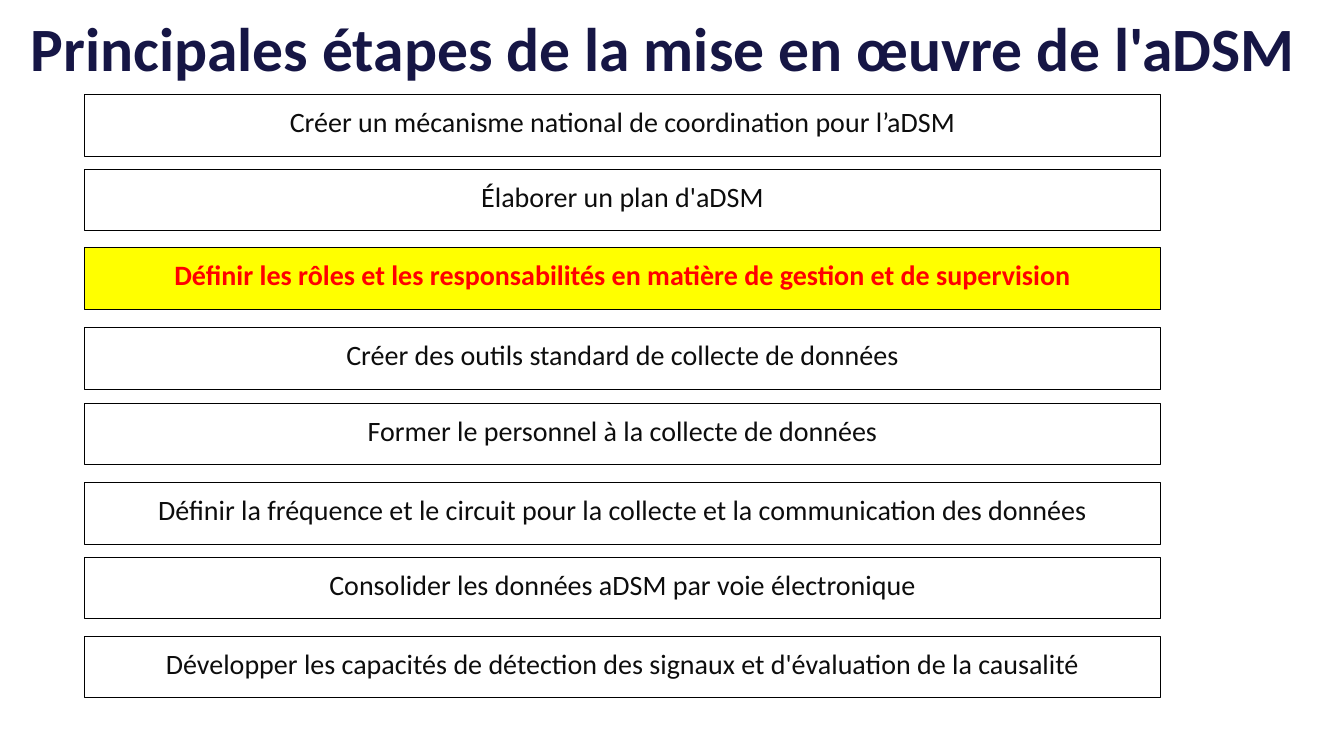
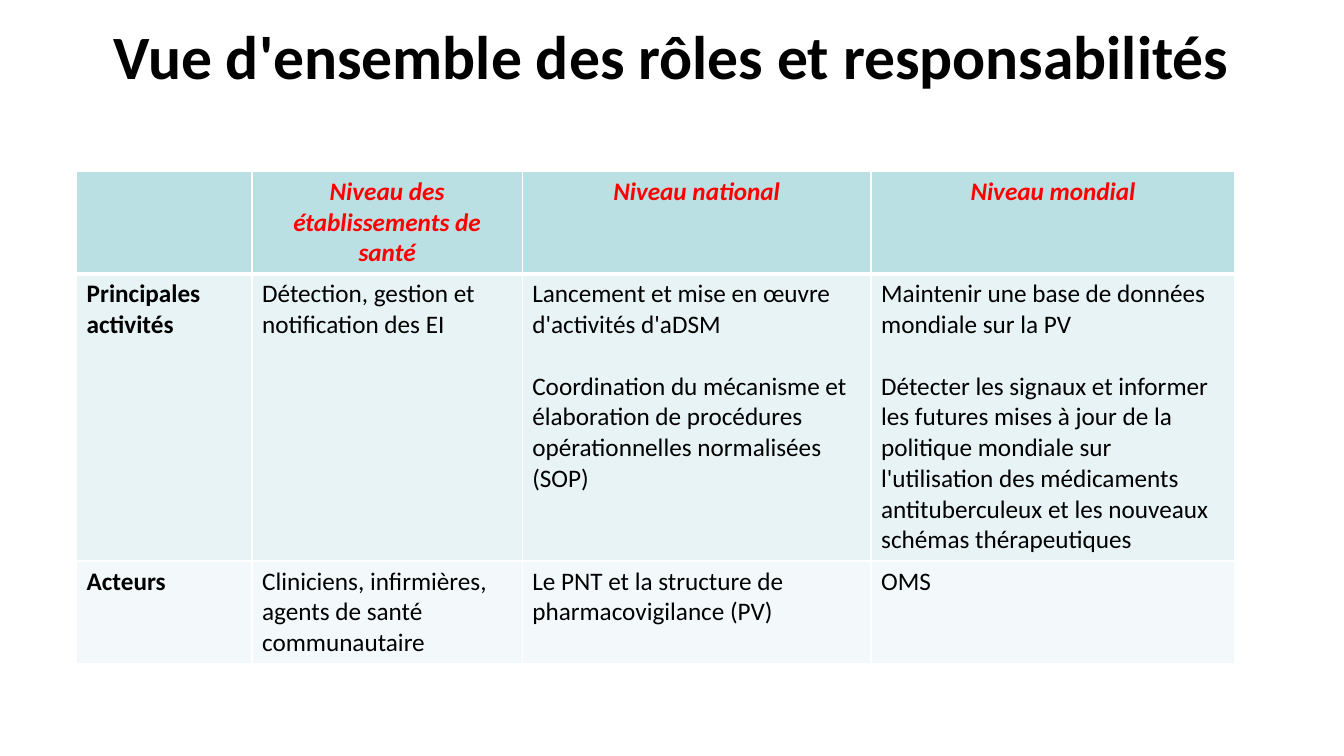
from pptx import Presentation
from pptx import util as u
from pptx.dml.color import RGBColor
from pptx.enum import shapes, text
from pptx.oxml import parse_xml
from pptx.oxml.ns import nsdecls

EMU_PER_PX = 9144
FONT = "Calibri"
TITLE_ONLY_LAYOUT = 5

BLACK = RGBColor(0x00, 0x00, 0x00)
SOFT_BLACK = RGBColor(0x0D, 0x0D, 0x0D)
WHITE = RGBColor(0xFF, 0xFF, 0xFF)
NAVY = RGBColor(0x16, 0x16, 0x45)
RED = RGBColor(0xFF, 0x00, 0x00)
YELLOW = RGBColor(0xFF, 0xFF, 0x00)
HEADER_TEAL = RGBColor(0xBB, 0xE0, 0xE3)
ACTIVITY_TEAL = RGBColor(0xE7, 0xF3, 0xF4)
ACTOR_TEAL = RGBColor(0xF3, 0xF9, 0xFA)

STEP_LEFT, STEP_WIDTH, STEP_HEIGHT = 84, 1067, 61
CURRENT_STEP = 2
STEPS = [
    (94, "Créer un mécanisme national de coordination pour l’aDSM"),
    (168, "Élaborer un plan d'aDSM"),
    (246, "Définir les rôles et les responsabilités en matière de gestion et de supervision"),
    (325, "Créer des outils standard de collecte de données"),
    (400, "Former le personnel à la collecte de données"),
    (479, "Définir la fréquence et le circuit pour la collecte et la communication des données"),
    (553, "Consolider les données aDSM par voie électronique"),
    (631, "Développer les capacités de détection des signaux et d'évaluation de la causalité"),
]

LEVEL_WIDTHS = [174, 268, 346, 361]
ROW_HEIGHTS = [101, 285, 101]
ROW_FILLS = [HEADER_TEAL, ACTIVITY_TEAL, ACTOR_TEAL]
ROLES = [
    [
        "",
        "Niveau des établissements de santé",
        "Niveau national",
        "Niveau mondial",
    ],
    [
        "Principales activités",
        "Détection, gestion et notification des EI",
        "Lancement et mise en œuvre d'activités d'aDSM\n"
        "Coordination du mécanisme et élaboration de procédures "
        "opérationnelles normalisées (SOP)",
        "Maintenir une base de données mondiale sur la PV\n"
        "Détecter les signaux et informer les futures mises à jour de la "
        "politique mondiale sur l'utilisation des médicaments "
        "antituberculeux et les nouveaux schémas thérapeutiques",
    ],
    [
        "Acteurs",
        "Cliniciens, infirmières, agents de santé communautaire",
        "Le PNT et la structure de pharmacovigilance (PV)",
        "OMS",
    ],
]


def px(*lengths):
    return [u.Emu(length * EMU_PER_PX) for length in lengths]


def write(frame, wording, size, color, bold=False, italic=False, centred=True):
    frame.text = wording
    for paragraph in frame.paragraphs:
        paragraph.alignment = text.PP_ALIGN.CENTER if centred else text.PP_ALIGN.LEFT
        for run in paragraph.runs:
            font = run.font
            font.name, font.size = FONT, u.Pt(size)
            font.bold, font.italic = bold, italic
            font.color.rgb = color


def add_titled_slide(deck, wording, color, box):
    slide = deck.slides.add_slide(deck.slide_layouts[TITLE_ONLY_LAYOUT])
    title = slide.shapes.title
    title.left, title.top, title.width, title.height = px(*box)
    frame = title.text_frame
    write(frame, wording, 44, color, bold=True)
    frame.word_wrap = True
    frame.auto_size = text.MSO_AUTO_SIZE.NONE
    frame.vertical_anchor = text.MSO_ANCHOR.TOP
    return slide


def add_step(group, top, wording, current):
    step = group.shapes.add_shape(
        shapes.MSO_SHAPE.RECTANGLE, *px(STEP_LEFT, top, STEP_WIDTH, STEP_HEIGHT)
    )
    step.shadow.inherit = False
    step.fill.solid()
    step.fill.fore_color.rgb = YELLOW if current else WHITE
    step.line.color.rgb = BLACK
    step.line.width = u.Pt(0.75)
    frame = step.text_frame
    frame.word_wrap = True
    frame.vertical_anchor = text.MSO_ANCHOR.TOP
    write(frame, wording, 20, RED if current else SOFT_BLACK, bold=current)
    frame.paragraphs[0].line_spacing = 1.15
    frame.paragraphs[0].space_after = u.Pt(10)


def set_borders(cell, top, bottom):
    properties = cell._tc.get_or_add_tcPr()
    for side, points in (("L", 1), ("R", 1), ("T", top), ("B", bottom)):
        properties.append(parse_xml(
            f'<a:ln{side} {nsdecls("a")} w="{u.Pt(points)}"><a:solidFill>'
            f'<a:srgbClr val="{WHITE}"/></a:solidFill></a:ln{side}>'
        ))


def fill_role_cell(cell, wording, row, column):
    header = row == 0
    set_borders(cell, top=3 if row == 1 else 1, bottom=3 if header else 1)
    cell.fill.solid()
    cell.fill.fore_color.rgb = ROW_FILLS[row]
    write(
        cell.text_frame, wording, 18, RED if header else BLACK,
        bold=header or column == 0, italic=header, centred=header,
    )
    for paragraph in cell.text_frame.paragraphs[1:]:
        paragraph.space_before = u.Pt(22)


def add_roles_table(slide):
    roles = slide.shapes.add_table(
        len(ROLES), len(LEVEL_WIDTHS),
        *px(76, 170, sum(LEVEL_WIDTHS), sum(ROW_HEIGHTS)),
    ).table
    for column, width in zip(roles.columns, px(*LEVEL_WIDTHS)):
        column.width = width
    for row, height in zip(roles.rows, px(*ROW_HEIGHTS)):
        row.height = height
    for row, wordings in enumerate(ROLES):
        for column, wording in enumerate(wordings):
            fill_role_cell(roles.cell(row, column), wording, row, column)


def main():
    deck = Presentation()
    deck.slide_width, deck.slide_height = px(1333, 750)

    steps_slide = add_titled_slide(
        deck, "Principales étapes de la mise en œuvre de l'aDSM", NAVY, (13, 5, 1291, 87)
    )
    step_group = steps_slide.shapes.add_group_shape()
    for index, (top, wording) in enumerate(STEPS):
        add_step(step_group, top, wording, index == CURRENT_STEP)

    roles_slide = add_titled_slide(
        deck, "Vue d'ensemble des rôles et responsabilités", BLACK, (42, 13, 1249, 125)
    )
    add_roles_table(roles_slide)

    deck.save("out.pptx")


if __name__ == "__main__":
    main()
